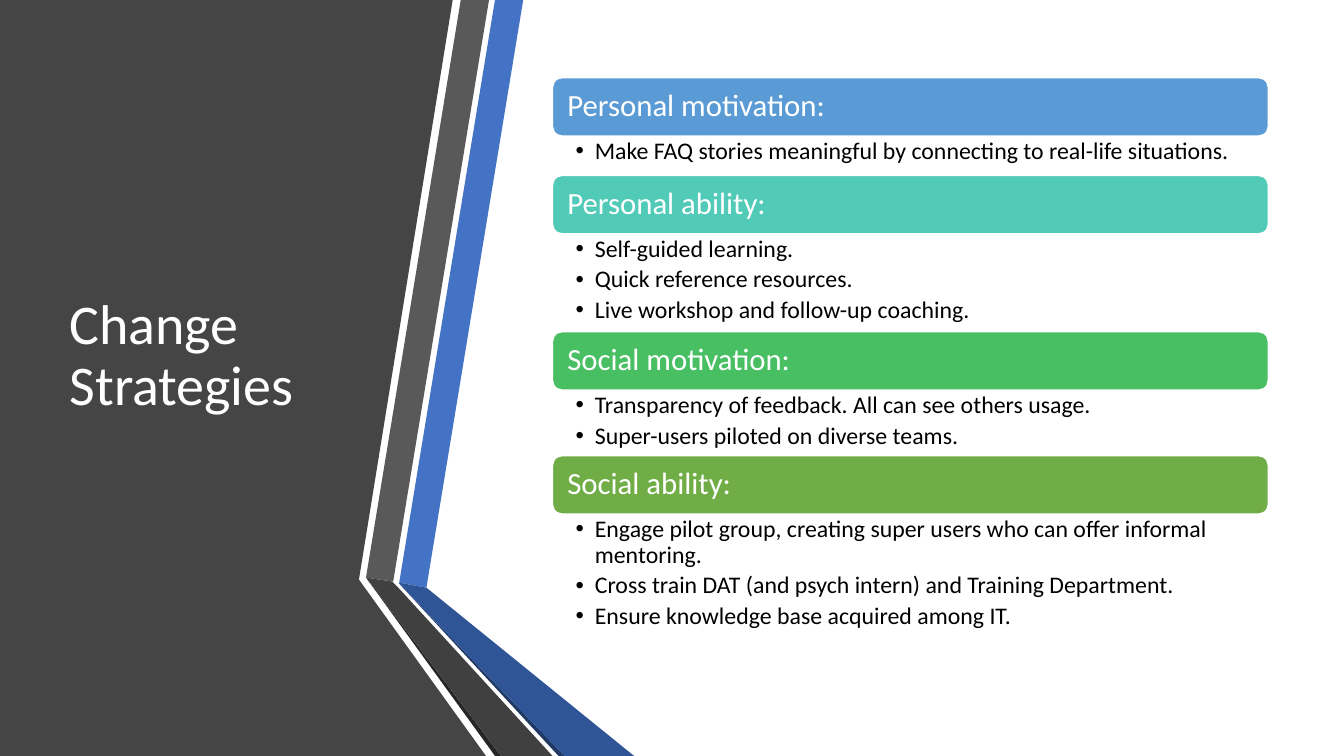
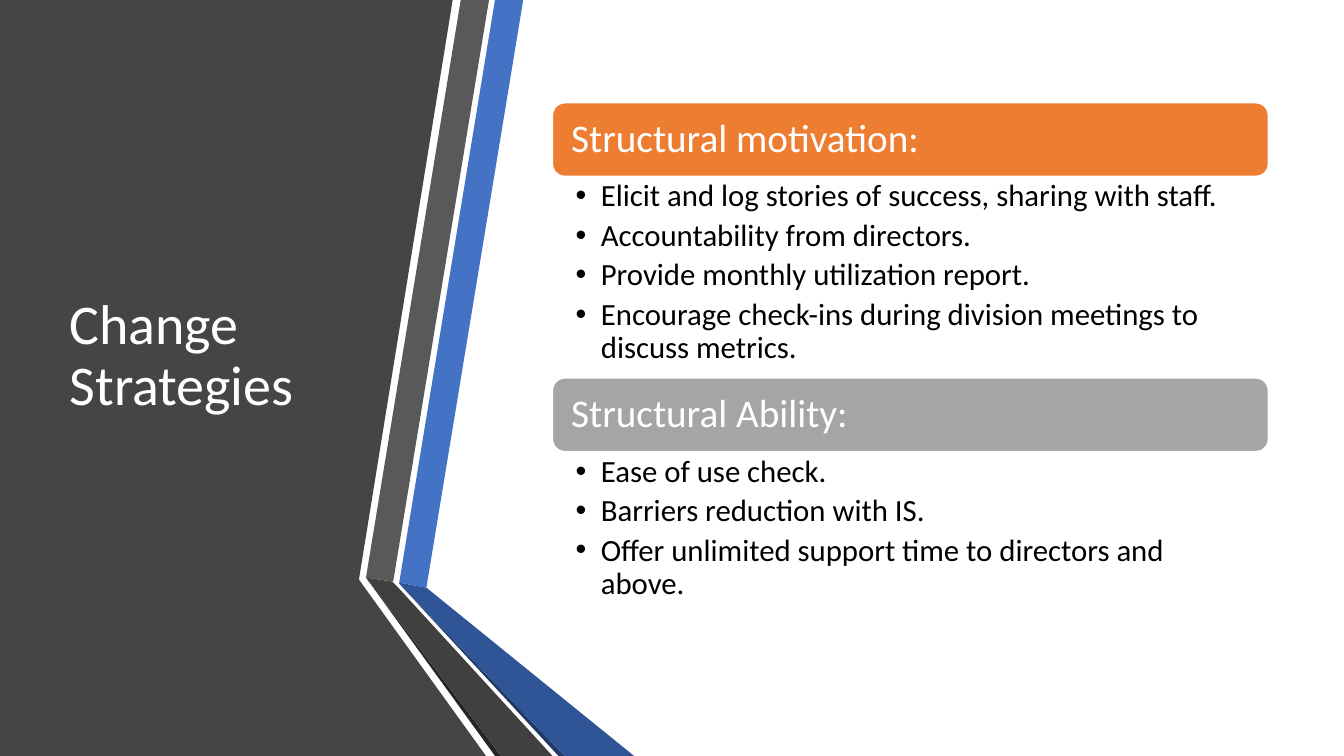
from lxml import etree
from pptx import Presentation
from pptx.dml.color import RGBColor
from pptx.enum.shapes import MSO_SHAPE
from pptx.enum.text import MSO_ANCHOR, MSO_AUTO_SIZE, PP_ALIGN
from pptx.oxml.ns import qn
from pptx.util import Pt

ROUNDED = MSO_SHAPE.ROUNDED_RECTANGLE
TOP, MIDDLE = MSO_ANCHOR.TOP, MSO_ANCHOR.MIDDLE
LEFT = PP_ALIGN.LEFT
NO_AUTOFIT = MSO_AUTO_SIZE.NONE

PX = 9144  # 100 px to the inch
FONT = "Calibri"
COLORS = {
    "white": "FFFFFF", "black": "000000", "panel": "454545",
    "blue": "4472C4", "blue_dark": "2F5597", "blue_edge": "203864",
    "gray": "595959", "gray_dark": "404040", "gray_edge": "262626",
    "sky": "5B9BD5", "teal": "52CAB8", "green": "49BF64",
    "olive": "70AD47", "orange": "ED7D31", "silver": "A5A5A5",
}

# Folded ribbon beside the dark title panel, back to front
BACKDROP = [
    ("panel", [(0, 0), (449, 0), (356, 575), (482, 750), (0, 750)]),
    ("blue", [(396, 578), (423, 583), (519, 0), (491, 0)]),
    ("gray", [(485, 0), (457, 0), (363, 573), (390, 577)]),
    ("gray_edge", [(363, 573), (491, 750), (497, 750)]),
    ("blue_edge", [(396, 579), (554, 750), (560, 750)]),
    ("blue_dark", [(396, 579), (560, 750), (629, 750), (423, 583), (396, 578)]),
    ("gray_dark", [(548, 750), (395, 583), (389, 577), (363, 573), (497, 750)]),
]

TITLE = "Change Strategies"
TITLE_BOX = {"left": 59, "top": 75, "width": 304, "height": 558}
LIST_LEFT, LIST_WIDTH = 548, 710

# Each section: heading, colour, height of its bullet area, bullets
SLIDES = [
    {
        "top": 77, "heading_height": 58, "heading_size": 22, "heading_inset": 12,
        "bullet_size": 17, "bullet_indent": 19, "bullet_insets": (23, 3, 17, 3),
        "sections": [
            ("Personal motivation:", "sky", 39, [
                "Make FAQ stories meaningful by connecting to real-life situations."]),
            ("Personal ability:", "teal", 97, [
                "Self-guided learning.",
                "Quick reference resources.",
                "Live workshop and follow-up coaching."]),
            ("Social motivation:", "green", 65, [
                "Transparency of feedback. All can see others usage.",
                "Super-users piloted on diverse teams."]),
            ("Social ability:", "olive", 122, [
                "Engage pilot group, creating super users who can offer informal mentoring.",
                "Cross train DAT (and psych intern) and Training Department.",
                "Ensure knowledge base acquired among IT."]),
        ],
    },
    {
        "top": 102, "heading_height": 73, "heading_size": 28, "heading_inset": 15,
        "bullet_size": 22, "bullet_indent": 25, "bullet_insets": (23, 4, 22, 4),
        "sections": [
            ("Structural motivation:", "orange", 200, [
                "Elicit and log stories of success, sharing with staff.",
                "Accountability from directors.",
                "Provide monthly utilization report.",
                "Encourage check-ins during division meetings to discuss metrics."]),
            ("Structural Ability:", "silver", 158, [
                "Ease of use check.",
                "Barriers reduction with IS.",
                "Offer unlimited support time to directors and above."]),
        ],
    },
]


def rgb(name):
    return RGBColor.from_string(COLORS[name])


def write_text(shape, lines, size, color, anchor, insets, space_after=0):
    """Fill the shape with one paragraph per line; insets run left, top, right, bottom."""
    frame = shape.text_frame
    frame.text = "\n".join(lines)
    frame_format = {"word_wrap": True, "auto_size": NO_AUTOFIT, "vertical_anchor": anchor}
    for side, inset in zip(("left", "top", "right", "bottom"), insets):
        frame_format["margin_" + side] = inset * PX
    for key, value in frame_format.items():
        setattr(frame, key, value)
    for paragraph in frame.paragraphs:
        paragraph.alignment = LEFT
        paragraph.line_spacing = 0.9
        paragraph.space_after = Pt(space_after)
        font = paragraph.runs[0].font
        font.name, font.size = FONT, Pt(size)
        font.color.rgb = rgb(color)


prs = Presentation()
prs.slide_width, prs.slide_height = 1333 * PX, 750 * PX
title_only = prs.slide_layouts[5]

for content in SLIDES:
    slide = prs.slides.add_slide(title_only)
    shapes = slide.shapes

    for color, points in BACKDROP:
        outline = shapes.build_freeform(*points[0], scale=PX)
        outline.add_line_segments(points[1:], close=True)
        facet = outline.convert_to_shape()
        facet.shadow.inherit = False
        facet.fill.solid()
        facet.fill.fore_color.rgb = rgb(color)
        facet.line.fill.background()

    title = shapes.title
    for key, value in TITLE_BOX.items():
        setattr(title, key, value * PX)
    write_text(title, [TITLE], 40, "white", MIDDLE, (10, 5, 10, 5))
    title._element.getparent().append(title._element)  # in front of the panel

    top = content["top"]
    heading_height = content["heading_height"]
    for heading, color, bullets_height, bullets in content["sections"]:
        bar = shapes.add_shape(ROUNDED, LIST_LEFT * PX, top * PX,
                               LIST_WIDTH * PX, heading_height * PX)
        bar.shadow.inherit = False
        bar.fill.solid()
        bar.fill.fore_color.rgb = rgb(color)
        bar.line.color.rgb = rgb("white")
        bar.line.width = Pt(1)
        inset = content["heading_inset"]
        write_text(bar, [heading], content["heading_size"], "white", MIDDLE,
                   (inset, 0, inset, 0))
        top += heading_height

        details = shapes.add_textbox(LIST_LEFT * PX, top * PX,
                                     LIST_WIDTH * PX, bullets_height * PX)
        size = content["bullet_size"]
        write_text(details, bullets, size, "black", TOP, content["bullet_insets"],
                   space_after=round(size * 0.2, 1))
        indent = content["bullet_indent"] * PX
        for paragraph in details.text_frame.paragraphs:
            properties = paragraph._p.get_or_add_pPr()
            properties.set("marL", str(indent))
            properties.set("indent", str(-indent))
            etree.SubElement(properties, qn("a:buFont"), typeface="Arial")
            etree.SubElement(properties, qn("a:buChar"), char="•")
        top += bullets_height

prs.save("out.pptx")
